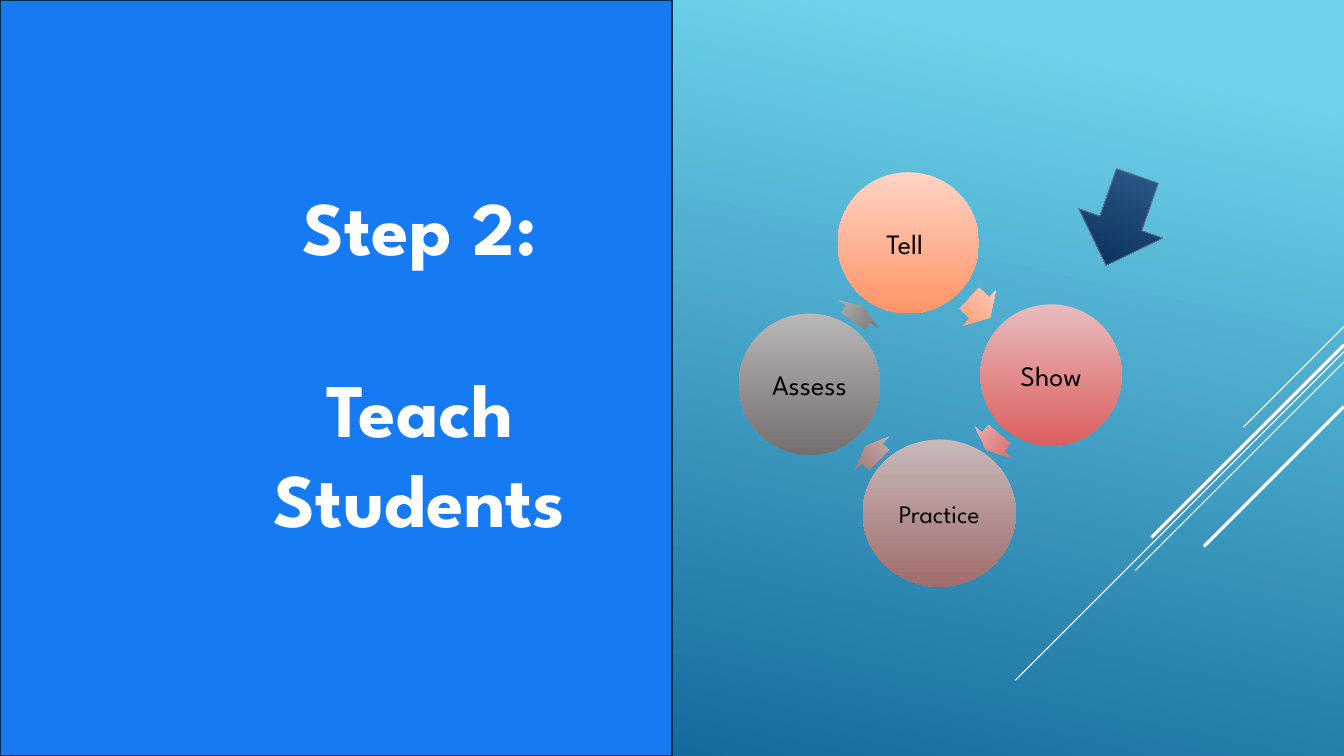
from dataclasses import dataclass

from lxml import etree
from pptx import Presentation
from pptx.dml.color import RGBColor
from pptx.enum.shapes import MSO_CONNECTOR, MSO_SHAPE as SHAPE
from pptx.enum.text import MSO_ANCHOR as ANCHOR, PP_ALIGN as ALIGN
from pptx.oxml.ns import qn
from pptx.util import Cm, Pt


@dataclass(frozen=True)
class Theme:
    font: str = "League Spartan"
    title_size: float = 54
    title_gap: float = 65
    step_size: float = 20
    long_step_size: float = 18
    white: str = "FFFFFF"
    black: str = "000000"
    panel: str = "167BF3"
    panel_line: str = "043148"
    pointer: tuple = ("316190", "042853")
    pointer_line: str = "89919C"
    background: tuple = ("6ED2EB", "06588E")
    tell: tuple = ("FFD4C6", "FF9467")
    show: tuple = ("E8BCBD", "DC5E5E")
    practice: tuple = ("C8BABA", "A06C6A")
    assess: tuple = ("B9B6B6", "757070")


@dataclass(frozen=True)
class Box:
    left: float
    top: float
    width: float
    height: float


THEME = Theme()
SLIDE = Box(0, 0, 33.87, 19.05)
LEFT_HALF = Box(0, 0, 16.93, 19.05)
RIGHT_HALF = Box(16.93, 0, 16.94, 19.05)

# Label, type size, colours, circle centre and size
STEPS = [
    ("Tell ", THEME.step_size, THEME.tell, (5.96, 6.12), (3.56, 3.56)),
    ("Show", THEME.step_size, THEME.show, (9.56, 9.45), (3.56, 3.56)),
    ("Practice", THEME.long_step_size, THEME.practice, (6.74, 12.93), (3.86, 3.71)),
    ("Assess", THEME.step_size, THEME.assess, (3.47, 9.68), (3.56, 3.56)),
]
# Preset, centre, length and rotation of the arrow that follows each step
ARROWS = [
    (SHAPE.RIGHT_ARROW, (7.76, 7.76), 0.71, 42.7),
    (SHAPE.LEFT_ARROW, (8.09, 11.14), 0.51, 310.9),
    (SHAPE.LEFT_ARROW, (5.05, 11.42), 0.48, 45.3),
    (SHAPE.RIGHT_ARROW, (4.70, 7.91), 0.43, 305.1),
]
ARROW_WIDTH = 1.19
# Start height on the right edge, run, line width
DIAGONALS = [
    (8.23, 2.54, 0.75),
    (8.86, 8.28, 0.75),
    (9.12, 5.26, 0.75),
    (8.69, 4.85, 2.25),
    (10.24, 3.53, 2.25),
]


def color(value):
    return RGBColor.from_string(value)


def set_attributes(target, values):
    for name, value in values.items():
        setattr(target, name, value)


def fill_gradient(fill, colors, clockwise=90, start=0):
    fill.gradient()
    fill.gradient_angle = 360 - clockwise
    for stop, value, position in zip(fill.gradient_stops, colors, (start, 1)):
        stop.color.rgb = color(value)
        stop.position = position


def add_centered(slide, preset, center, size, colors, rotation=0):
    (x, y), (width, height) = center, size
    shape = slide.shapes.add_shape(
        preset, Cm(x - width / 2), Cm(y - height / 2), Cm(width), Cm(height))
    shape.shadow.inherit = False
    shape.rotation = rotation
    fill_gradient(shape.fill, colors)
    shape.line.fill.background()
    return shape


def write_text(frame, lines, size, ink, bold=False, margin=0.25, **spacing):
    set_attributes(frame, {
        "word_wrap": True, "vertical_anchor": ANCHOR.MIDDLE,
        "margin_left": Cm(margin), "margin_right": Cm(margin),
        "margin_top": Cm(margin / 2), "margin_bottom": Cm(margin / 2)})
    for index, line in enumerate(lines):
        paragraph = frame.add_paragraph() if index else frame.paragraphs[0]
        paragraph.alignment = ALIGN.CENTER
        if index:
            set_attributes(paragraph, spacing)
        run = paragraph.add_run()
        run.text = line
        set_attributes(run.font, {"name": THEME.font, "size": Pt(size), "bold": bold})
        run.font.color.rgb = color(ink)


def add_diagonals(slide, box):
    right = box.left + box.width
    for top, run, width in DIAGONALS:
        line = slide.shapes.add_connector(
            MSO_CONNECTOR.STRAIGHT, Cm(right), Cm(box.top + top),
            Cm(right - run), Cm(box.top + top + run))
        line.line.color.rgb = color(THEME.white)
        line.line.width = Pt(width)
        etree.SubElement(line.element.spPr, qn("a:effectLst"))


def add_title_panel(slide, box):
    panel = slide.shapes.add_shape(
        SHAPE.RECTANGLE, Cm(box.left), Cm(box.top), Cm(box.width), Cm(box.height))
    panel.shadow.inherit = False
    panel.fill.solid()
    panel.fill.fore_color.rgb = color(THEME.panel)
    panel.line.color.rgb = color(THEME.panel_line)
    panel.line.width = Pt(1.25)

    title = slide.shapes.add_textbox(
        Cm(box.left + 5.28), Cm(box.top + 7.52), Cm(10.59), Cm(3.18))
    write_text(title.text_frame, ["Step 2:", "Teach Students"], THEME.title_size,
               THEME.white, bold=True, space_before=Pt(THEME.title_gap))


def add_pointer(slide, box):
    pointer = add_centered(slide, SHAPE.DOWN_ARROW, (box.left + 11.34, box.top + 5.56),
                           (2.24, 2.39), THEME.pointer, 19.3)
    pointer.line.color.rgb = color(THEME.pointer_line)
    pointer.line.width = Pt(0.75)
    line_color = pointer.line._get_or_add_ln().find(".//" + qn("a:srgbClr"))
    etree.SubElement(line_color, qn("a:alpha"), val="60000")


def add_cycle(slide, box):
    for step, arrow in zip(STEPS, ARROWS):
        label, type_size, colors, (x, y), size = step
        circle = add_centered(
            slide, SHAPE.OVAL, (box.left + x, box.top + y), size, colors)
        write_text(circle.text_frame, [label], type_size, THEME.black, margin=0.06)

        preset, (x, y), length, rotation = arrow
        link = add_centered(slide, preset, (box.left + x, box.top + y),
                            (length, ARROW_WIDTH), colors, rotation)
        link.adjustments[0] = 0.6
        link.adjustments[1] = 0.5


def main():
    presentation = Presentation()
    set_attributes(presentation, {
        "slide_width": Cm(SLIDE.width), "slide_height": Cm(SLIDE.height)})
    slide = presentation.slides.add_slide(presentation.slide_layouts[6])
    fill_gradient(slide.background.fill, THEME.background, clockwise=102, start=0.1)

    add_diagonals(slide, SLIDE)
    add_title_panel(slide, LEFT_HALF)
    add_pointer(slide, RIGHT_HALF)
    add_cycle(slide, RIGHT_HALF)
    presentation.save("out.pptx")


if __name__ == "__main__":
    main()
